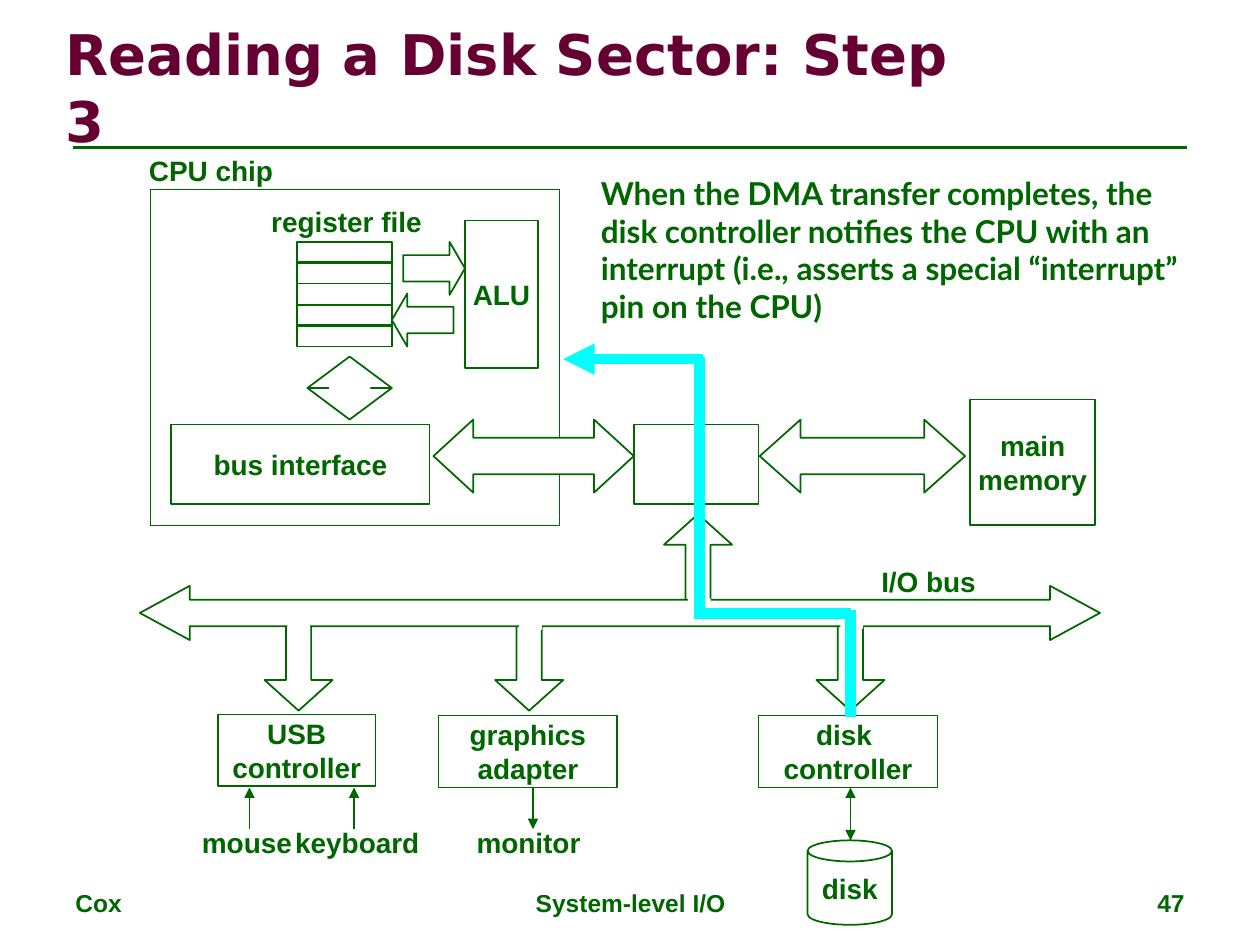
import pptx
import pptx.util
import pptx.dml.color
import pptx.enum.shapes
import pptx.enum.text
import pptx.oxml.ns
from lxml import etree

PX = 9144  # EMU per px, 100 px to the inch
COLORS = {"green": "006600", "maroon": "660033", "cyan": "00FFFF", "white": "FFFFFF"}
KIND = pptx.enum.shapes.MSO_SHAPE
ALIGN = pptx.enum.text.PP_ALIGN
ANCHOR = pptx.enum.text.MSO_ANCHOR
rgb = {name: pptx.dml.color.RGBColor.from_string(value) for name, value in COLORS.items()}

deck = pptx.Presentation()
deck.slide_width, deck.slide_height = 1000 * PX, 750 * PX
page = deck.slides.add_slide(deck.slide_layouts[6])


def add_box(kind, at, text="", adjust=(), fill=None, line=1, size=16, font="Arial",
            color="green", align=ALIGN.CENTER, anchor=ANCHOR.MIDDLE, wrap=False):
    """Add a preset shape, or a text box when kind is None."""
    place = [value * PX for value in at]
    if kind is None:
        box = page.shapes.add_textbox(*place)
    else:
        box = page.shapes.add_shape(kind, *place)
        box.shadow.inherit = False
        for index, value in enumerate(adjust):
            box.adjustments[index] = value
        if fill:
            box.fill.solid()
            box.fill.fore_color.rgb = rgb[fill]
        else:
            box.fill.background()
        if line:
            box.line.color.rgb = rgb["green"]
            box.line.width = pptx.util.Pt(line)
        else:
            box.line.fill.background()
    if text:
        frame = box.text_frame
        frame.word_wrap = wrap
        frame.vertical_anchor = anchor
        for index, words in enumerate(text.split("\n")):
            para = frame.add_paragraph() if index else frame.paragraphs[0]
            para.text = words
            para.alignment = align
            para.font.name = font
            para.font.size = pptx.util.Pt(size)
            para.font.bold = True
            para.font.color.rgb = rgb[color]


def add_line(x1, y1, x2, y2, color="green", width=1, ends=()):
    """Add a straight line; ends holds headEnd (start) and/or tailEnd (finish)."""
    line = page.shapes.add_connector(pptx.enum.shapes.MSO_CONNECTOR.STRAIGHT,
                                     x1 * PX, y1 * PX, x2 * PX, y2 * PX)
    line.line.color.rgb = rgb[color]
    line.line.width = pptx.util.Pt(width)
    outline = line.line._get_or_add_ln()
    for end in ends:
        etree.SubElement(outline, pptx.oxml.ns.qn("a:" + end), type="triangle")
    etree.SubElement(line._element.spPr, pptx.oxml.ns.qn("a:effectLst"))


# Title, rule and footer
add_line(58, 117, 942, 117, width=1.5)
for text, at, align in (("Cox", (50, 700, 233, 35), ALIGN.LEFT),
                        ("System-level I/O", (342, 700, 317, 35), ALIGN.CENTER),
                        ("47", (717, 700, 233, 35), ALIGN.RIGHT)):
    add_box(None, at, text, size=14, align=align, anchor=ANCHOR.TOP, wrap=True)
add_box(None, (42, 37, 761, 63), "Reading a Disk Sector: Step 3", size=32,
        font="DejaVu Sans", color="maroon", align=ALIGN.LEFT, wrap=True)

# CPU chip, main memory and the bridge between them
add_box(KIND.RECTANGLE, (119, 150, 325, 267), line=0.25)
add_box(KIND.RECTANGLE, (770, 317, 99, 100), "main\nmemory")
add_box(KIND.LEFT_RIGHT_ARROW, (603, 333, 163, 58), adjust=(0.5, 0.56))
add_box(KIND.RECTANGLE, (503, 337, 99, 63))
add_box(KIND.LEFT_RIGHT_ARROW, (344, 333, 159, 58), adjust=(0.5, 0.545), fill="white")

# Register file and ALU
for row in range(5):
    add_box(KIND.RECTANGLE, (236, round((575 + 50 * row) / 3), 75, 17))
add_box(KIND.RIGHT_ARROW, (320, 192, 49, 42), adjust=(0.5, 0.29))
add_box(KIND.LEFT_ARROW, (311, 233, 49, 42), adjust=(0.5, 0.29))
add_box(KIND.RECTANGLE, (369, 175, 58, 117), "ALU")
# This preset lists its head length before its shaft width
add_box(KIND.UP_DOWN_ARROW, (244, 283, 67, 50), adjust=(0.2, 0.5))
add_box(KIND.RECTANGLE, (136, 337, 205, 63), "bus interface")

# Controllers below the I/O bus, each with its arrow
BRANCH = (0.37, 0.45)
add_box(KIND.UP_ARROW, (527, 408, 54, 75), adjust=BRANCH)
for arrow_left, at, text in ((648, (602, 568, 142, 57), "disk \ncontroller"),
                             (393, (348, 568, 142, 57), "graphics\nadapter"),
                             (210, (173, 567, 125, 57), "USB\ncontroller")):
    add_box(KIND.DOWN_ARROW, (arrow_left, 489, 54, 75), adjust=BRANCH)
    add_box(KIND.RECTANGLE, at, text)

# Devices
for x, bottom, ends in ((198, 658, ["headEnd"]), (281, 658, ["headEnd"]),
                        (423, 658, ["tailEnd"]), (675, 667, ["headEnd", "tailEnd"])):
    add_line(x, 625, x, bottom, ends=ends)
add_box(KIND.CAN, (641, 667, 67, 67), "disk", adjust=(0.25,))

# I/O bus, with white patches that open it to its branches
add_box(KIND.LEFT_RIGHT_ARROW, (111, 465, 762, 43), adjust=(0.49, 0.92), fill="white")
for left, top in ((228, 484), (412, 483), (667, 482), (546, 475)):
    add_box(KIND.RECTANGLE, (left, top, 18, 17), fill="white", line=None)

# Labels
for text, at in (("register file", (205, 157, 140, 37)),
                 ("CPU chip", (108, 117, 119, 37)),
                 ("mouse", (150, 650, 92, 37)),
                 ("keyboard", (224, 650, 119, 37)),
                 ("monitor", (368, 650, 103, 37)),
                 ("I/O bus", (689, 443, 96, 37))):
    add_box(None, at, text)

# Interrupt path from the disk controller to the CPU
add_line(558, 285, 447, 285, "cyan", 6, ["tailEnd"])
for segment in ((555, 283, 555, 484), (551, 487, 675, 487), (675, 484, 675, 569)):
    add_line(*segment, color="cyan", width=6)

# Explanation
add_box(None, (467, 133, 481, 130),
        "When the DMA transfer completes, the disk controller notifies the CPU with an "
        "interrupt (i.e., asserts a special “interrupt” pin on the CPU)",
        size=18, font="Lato", align=ALIGN.LEFT, anchor=ANCHOR.TOP, wrap=True)

deck.save("out.pptx")
